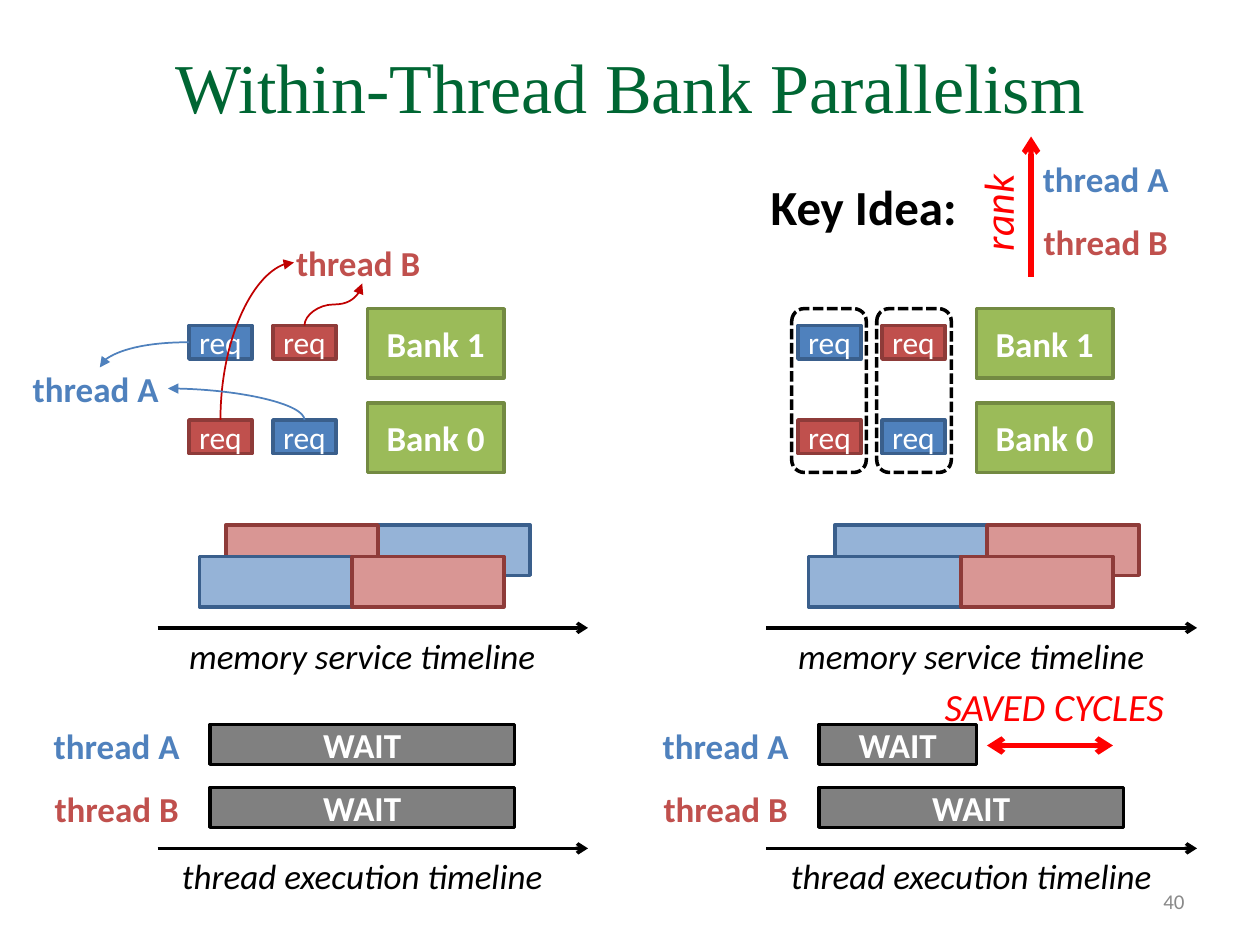
from math import cos, radians, sin

from lxml.etree import SubElement
from pptx import Presentation
from pptx.dml.color import RGBColor
from pptx.enum.dml import MSO_LINE
from pptx.enum.shapes import MSO_CONNECTOR as Connector, MSO_SHAPE as Shape
from pptx.enum.text import MSO_ANCHOR as Anchor, PP_ALIGN as Align
from pptx.oxml.ns import qn
from pptx.util import Emu, Pt

SCALE = 7620  # EMU per px, 120 px to the inch

BLACK = RGBColor(0x00, 0x00, 0x00)
WHITE = RGBColor(0xFF, 0xFF, 0xFF)
TITLE_GREEN = RGBColor(0x00, 0x66, 0x33)
BANK_FILL = RGBColor(0x9B, 0xBB, 0x59)
BANK_LINE = RGBColor(0x73, 0x8A, 0x42)
BLUE = RGBColor(0x4F, 0x81, 0xBD)
BLUE_LINE = RGBColor(0x3A, 0x5F, 0x8C)
PALE_BLUE = RGBColor(0x95, 0xB3, 0xD7)
RED = RGBColor(0xC0, 0x50, 0x4D)
RED_LINE = RGBColor(0x8E, 0x3B, 0x39)
PALE_RED = RGBColor(0xD9, 0x96, 0x94)
DARK_RED = RGBColor(0xC0, 0x00, 0x00)
BRIGHT_RED = RGBColor(0xFF, 0x00, 0x00)
GRAY = RGBColor(0x80, 0x80, 0x80)
PAGE_GRAY = RGBColor(0x89, 0x89, 0x89)

THREAD_COLORS = {"A": BLUE, "B": RED}
THREAD_LINES = {"A": BLUE_LINE, "B": RED_LINE}
THREAD_TINTS = {"A": PALE_BLUE, "B": PALE_RED}


def px(*lengths):
    return [Emu(round(length * SCALE)) for length in lengths]


class SlideBuilder:
    def __init__(self, slide, font="Calibri"):
        self.slide = slide
        self.shapes = slide.shapes
        self.font = font

    def set_text(self, shape, text, size, color, bold=None, italic=None, font=None,
                 align=Align.CENTER, anchor=Anchor.MIDDLE, side_margin=12,
                 spacing=None, wrap=True):
        frame = shape.text_frame
        frame.word_wrap = wrap
        frame.vertical_anchor = anchor
        frame.margin_left = frame.margin_right = px(side_margin)[0]
        frame.margin_top = frame.margin_bottom = px(6)[0]
        paragraph = frame.paragraphs[0]
        paragraph.text = text
        paragraph.alignment = align
        paragraph.line_spacing = spacing
        style = paragraph.font
        style.name, style.size = font or self.font, Pt(size)
        style.bold, style.italic = bold, italic
        style.color.rgb = color

    def title(self, box, text):
        shape = self.shapes.title
        shape.left, shape.top, shape.width, shape.height = px(*box)
        self.set_text(shape, text, 40, TITLE_GREEN, font="Times New Roman")

    def text(self, box, text, size, color, rotation=0, **style):
        shape = self.shapes.add_textbox(*px(*box))
        shape.rotation = rotation
        self.set_text(shape, text, size, color, **style)

    def box(self, box, fill, line, text=None, size=20, **style):
        shape = self.shapes.add_shape(Shape.RECTANGLE, *px(*box))
        shape.shadow.inherit = False
        shape.fill.solid()
        shape.fill.fore_color.rgb = fill
        shape.line.color.rgb = line
        shape.line.width = Pt(2)
        if text:
            self.set_text(shape, text, size, WHITE, **style)

    def dashed_group(self, box):
        shape = self.shapes.add_shape(Shape.ROUNDED_RECTANGLE, *px(*box))
        shape.shadow.inherit = False
        shape.fill.background()
        shape.line.color.rgb = BLACK
        shape.line.width = Pt(2)
        shape.line.dash_style = MSO_LINE.SQUARE_DOT

    def arrow(self, start, end, color, width, kind=Connector.STRAIGHT,
              head=None, tail=None):
        connector = self.shapes.add_connector(kind, *px(*start, *end))
        connector.line.color.rgb = color
        connector.line.width = Pt(width)
        properties = connector.element.spPr
        outline = properties.find(qn("a:ln"))
        for tag, arrowhead in (("a:headEnd", head), ("a:tailEnd", tail)):
            if arrowhead:
                SubElement(outline, qn(tag), type=arrowhead)
        SubElement(properties, qn("a:effectLst"))
        return connector

    def curve(self, start, end, color, rotation, preset="curvedConnector2"):
        """Draw a curve whose frame is turned about the middle of its two ends."""
        middle_x, middle_y = (start[0] + end[0]) / 2, (start[1] + end[1]) / 2
        turn_cos, turn_sin = cos(radians(rotation)), sin(radians(rotation))

        def unturned(point):
            x, y = point[0] - middle_x, point[1] - middle_y
            return (middle_x + x * turn_cos + y * turn_sin,
                    middle_y - x * turn_sin + y * turn_cos)

        connector = self.arrow(unturned(start), unturned(end), color, 1,
                               Connector.CURVE, tail="triangle")
        properties = connector.element.spPr
        properties.find(qn("a:xfrm")).set("rot", str(rotation * 60000))
        properties.find(qn("a:prstGeom")).set("prst", preset)

    def thread_label(self, left, top, thread):
        self.text((left, top, 130, 40), f"thread {thread} ", 20,
                  THREAD_COLORS[thread], bold=True, side_margin=0)

    def timeline(self, left, top, caption):
        self.text((left, top, 390, 53), caption, 20, BLACK, italic=True,
                  anchor=Anchor.TOP)
        self.arrow((left, top), (left + 410, top), BLACK, 2, tail="arrow")

    def panel(self, left, back_order, wait_widths):
        """Draw one scheduling case: banks, requests and both timelines."""
        for bank, top, threads in ((1, 294, "AB"), (0, 384, "BA")):
            self.box((left + 350, top, 130, 66), BANK_FILL, BANK_LINE,
                     f"Bank {bank}", bold=True)
            for column, thread in enumerate(threads):
                self.box((left + 180 + 80 * column, top + 16, 60, 32),
                         THREAD_COLORS[thread], THREAD_LINES[thread],
                         "req", 18, side_margin=0)

        for offset, top, order in ((215, 500, back_order), (190, 530, "AB")):
            for thread in "AB":
                self.box((left + offset + 145 * order.index(thread), top, 145, 48),
                         THREAD_TINTS[thread], THREAD_LINES[thread])
        self.timeline(left + 150, 598, "memory service timeline")

        for row, (thread, width) in enumerate(zip("AB", wait_widths)):
            top = 690 + 60 * row
            self.thread_label(left + 50, top, thread)
            self.box((left + 200, top, width, 38), GRAY, BLACK, "WAIT",
                     bold=True, side_margin=0)
        self.timeline(left + 150, 808, "thread execution timeline")


def main():
    presentation = Presentation()
    presentation.slide_width, presentation.slide_height = px(1200, 900)
    builder = SlideBuilder(presentation.slides.add_slide(presentation.slide_layouts[5]))

    builder.title((60, 6, 1080, 150), "Within-Thread Bank Parallelism")
    builder.text((860, 834, 280, 48), "40", 12, PAGE_GRAY, align=Align.RIGHT)

    for left in (754, 835):
        builder.dashed_group((left, 294, 71, 156))
    builder.panel(0, "BA", (290, 290))
    builder.panel(580, "AB", (150, 290))

    # Which thread each waiting request belongs to
    builder.thread_label(280, 230, "B")
    builder.thread_label(30, 350, "A")
    builder.curve((290, 310), (345, 270), DARK_RED, 90, "curvedConnector3")
    builder.curve((210, 400), (280, 250), DARK_RED, 90)
    builder.curve((290, 400), (160, 370), BLUE, 270)
    builder.curve((180, 326), (95, 350), BLUE, 180)

    # Key idea: rank the threads
    builder.text((720, 172, 205, 59), "Key Idea:", 28, BLACK, bold=True,
                 spacing=0.8, wrap=False)
    builder.text((902, 176, 107, 53), "rank", 24, BRIGHT_RED, rotation=270,
                 italic=True, anchor=Anchor.TOP, spacing=0.8, wrap=False)
    builder.thread_label(992, 150, "A")
    builder.thread_label(992, 210, "B")
    builder.arrow((982, 130), (982, 264), BRIGHT_RED, 3, head="arrow")

    builder.arrow((1060, 710), (940, 710), BRIGHT_RED, 3, head="arrow", tail="arrow")
    builder.text((878, 653, 252, 49), "SAVED CYCLES", 22, BRIGHT_RED,
                 italic=True, anchor=Anchor.TOP, spacing=0.8)

    presentation.save("out.pptx")


if __name__ == "__main__":
    main()
